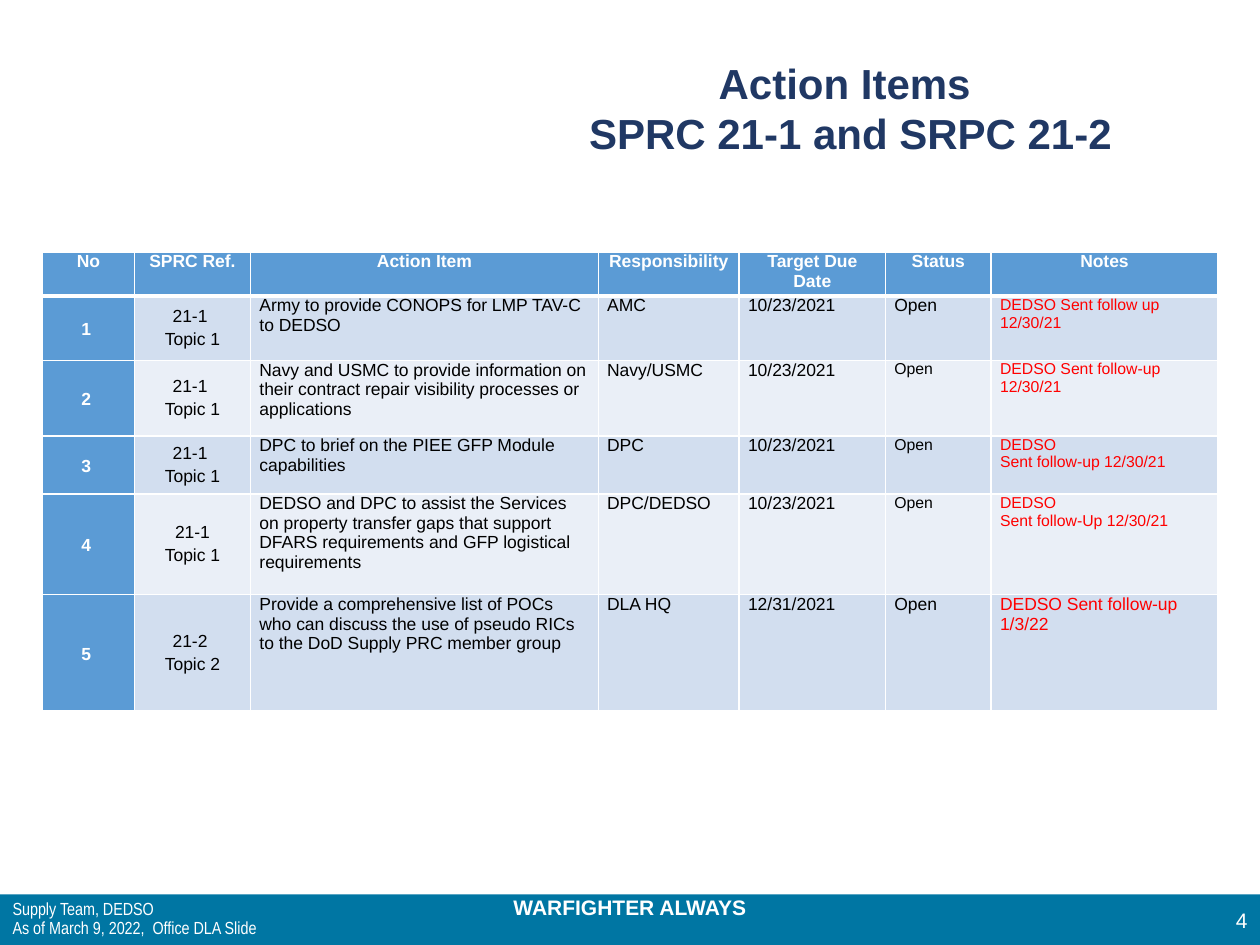
import pptx
import pptx.util
import pptx.dml.color
import pptx.enum.shapes
import pptx.enum.text
import pptx.oxml
import pptx.oxml.ns

Cm, Pt = pptx.util.Cm, pptx.util.Pt
ALIGN = pptx.enum.text.PP_ALIGN
ANCHOR = pptx.enum.text.MSO_ANCHOR

COLORS = {
    "bar": "0076A3", "title": "203864", "head": "5B9BD5",
    "odd": "D2DEEF", "even": "EAEFF7",
    "white": "FFFFFF", "black": "000000", "note": "FF0000",
}

TITLE = "Action Items \vSPRC 21-1 and SRPC 21-2"
MOTTO = "WARFIGHTER ALWAYS"
SOURCE = "Supply Team, DEDSO\vAs of March 9, 2022,  Office DLA Slide"
PAGE = "4"

HEADERS = ["No", "SPRC Ref.", "Action Item", "Responsibility",
           "Target Due Date", "Status", "Notes"]
# Each item: the seven cell texts, then the sizes of status and notes
ITEMS = [
    (["1 ", "21-1 \nTopic 1",
      "Army to provide CONOPS for LMP TAV-C to DEDSO",
      "AMC", "10/23/2021", "Open", "DEDSO Sent follow up 12/30/21"], 10, 9),
    (["2 ", "21-1 \nTopic 1",
      "Navy and USMC to provide information on their contract repair "
      "visibility processes or applications",
      "Navy/USMC", "10/23/2021", "Open", "DEDSO Sent follow-up 12/30/21"], 9, 9),
    (["3 ", "21-1 \nTopic 1",
      "DPC to brief on the PIEE GFP Module capabilities",
      "DPC", "10/23/2021", "Open", "DEDSO\nSent follow-up 12/30/21"], 9, 9),
    (["4 ", "21-1\nTopic 1",
      "DEDSO and DPC to assist the Services on property transfer gaps that "
      "support DFARS requirements and GFP logistical requirements",
      "DPC/DEDSO", "10/23/2021", "Open", "DEDSO \nSent follow-Up 12/30/21"], 9, 9),
    (["5 ", "21-2 \nTopic 2",
      "Provide a comprehensive list of POCs who can discuss the use of "
      "pseudo RICs to the DoD Supply PRC member group",
      "DLA HQ", "12/31/2021", "Open", "DEDSO Sent follow-up 1/3/22"], 10, 10),
]
COL_WIDTHS = [1.85, 2.34, 7.01, 2.84, 2.95, 2.13, 4.57]
ROW_HEIGHTS = [0.89, 1.3, 1.52, 1.17, 2.03, 2.34]


def rgb(name):
    return pptx.dml.color.RGBColor.from_string(COLORS[name])


def place(sp, left, top, width, height):
    sp.left, sp.top, sp.width, sp.height = Cm(left), Cm(top), Cm(width), Cm(height)


def write(tf, text, size, color, bold=False, align=ALIGN.LEFT, font="Arial", gap=0):
    """Write one paragraph per line of text; \\v breaks a line inside one."""
    for i, line in enumerate(text.split("\n")):
        p = tf.add_paragraph() if i else tf.paragraphs[0]
        p.alignment = align
        p.space_before = Pt(gap if i else 0)
        p.space_after = Pt(gap)
        for j, part in enumerate(line.split("\v")):
            if j:
                p.add_line_break()
            r = p.add_run()
            r.text = part
            r.font.name, r.font.size, r.font.bold = font, Pt(size), bold
            r.font.color.rgb = rgb(color)


def add_text(slide, box, text, size, anchor, **style):
    sp = slide.shapes.add_textbox(*map(Cm, box))
    tf = sp.text_frame
    tf.word_wrap = True
    tf.vertical_anchor = anchor
    write(tf, text, size, "white", **style)
    return sp


def set_borders(cell, top, bottom):
    tc_pr = cell._tc.get_or_add_tcPr()
    for side, width in (("L", 1), ("R", 1), ("T", top), ("B", bottom)):
        tc_pr.append(pptx.oxml.parse_xml(
            f'<a:ln{side} {pptx.oxml.ns.nsdecls("a")} w="{Pt(width)}"><a:solidFill>'
            f'<a:srgbClr val="{COLORS["white"]}"/></a:solidFill></a:ln{side}>'))


def fill_cell(cell, row, col, text, sizes):
    cell.margin_left = cell.margin_right = Cm(0.18)
    cell.margin_top = cell.margin_bottom = 0
    set_borders(cell, 3 if row == 1 else 1, 3 if row == 0 else 1)
    is_head = row == 0 or col == 0
    cell.fill.solid()
    cell.fill.fore_color.rgb = rgb("head" if is_head else "odd" if row % 2 else "even")
    if row and col < 2:
        cell.vertical_anchor = ANCHOR.MIDDLE
    color = "white" if is_head else "note" if col == 6 else "black"
    centred = is_head or col == 1
    write(cell.text_frame, text, sizes.get(col, 10), color, is_head,
          ALIGN.CENTER if centred else ALIGN.LEFT, gap=1 if centred else 0)
    if row and col == 0:
        cell.text_frame.paragraphs[0].line_spacing = 1.15


def add_items_table(slide):
    table = slide.shapes.add_table(
        len(ROW_HEIGHTS), len(COL_WIDTHS), Cm(0.86), Cm(5.08),
        Cm(sum(COL_WIDTHS)), Cm(sum(ROW_HEIGHTS))).table
    for column, width in zip(table.columns, COL_WIDTHS):
        column.width = Cm(width)
    for row, height in zip(table.rows, ROW_HEIGHTS):
        row.height = Cm(height)
    for i, (texts, status, notes) in enumerate([(HEADERS, 10, 10)] + ITEMS):
        for j, text in enumerate(texts):
            fill_cell(table.cell(i, j), i, j, text, {5: status, 6: notes})


def main():
    prs = pptx.Presentation()
    prs.slide_width, prs.slide_height = Cm(25.4), Cm(19.05)
    slide = prs.slides.add_slide(prs.slide_layouts[1])
    title, body = slide.shapes.title, slide.placeholders[1]

    bar = slide.shapes.add_shape(pptx.enum.shapes.MSO_SHAPE.RECTANGLE,
                                 0, Cm(18.03), prs.slide_width, Cm(1.02))
    bar.shadow.inherit = False
    bar.fill.solid()
    bar.fill.fore_color.rgb = rgb("bar")
    bar.line.fill.background()
    motto = add_text(slide, (0, 17.91, 25.4, 0.76), MOTTO, 12, ANCHOR.TOP,
                     bold=True, align=ALIGN.CENTER)
    # The footer band lies behind everything else
    for depth, sp in enumerate((bar, motto), 2):
        slide.shapes.element.insert(depth, sp.element)

    place(title, 10.16, 1.02, 13.97, 2.29)
    title.text_frame.auto_size = pptx.enum.text.MSO_AUTO_SIZE.NONE
    title.text_frame.vertical_anchor = ANCHOR.MIDDLE
    write(title.text_frame, TITLE, 24, "title", True, ALIGN.CENTER)

    add_items_table(slide)
    add_text(slide, (24.13, 18.03, 1.27, 1.02), PAGE, 12, ANCHOR.MIDDLE,
             align=ALIGN.RIGHT)

    place(body, 0, 18.03, 7.62, 1.02)
    tf = body.text_frame
    tf.auto_size = pptx.enum.text.MSO_AUTO_SIZE.NONE
    tf.vertical_anchor = ANCHOR.MIDDLE
    p_pr = tf.paragraphs[0]._p.get_or_add_pPr()
    p_pr.set("marL", "0")
    p_pr.set("indent", "0")
    p_pr.append(pptx.oxml.parse_xml(f'<a:buNone {pptx.oxml.ns.nsdecls("a")}/>'))
    write(tf, SOURCE, 10, "white", font="Arial Narrow")
    tf.paragraphs[0].line_spacing = 0.9
    slide.shapes.element.append(body.element)

    prs.save("out.pptx")


if __name__ == "__main__":
    main()
